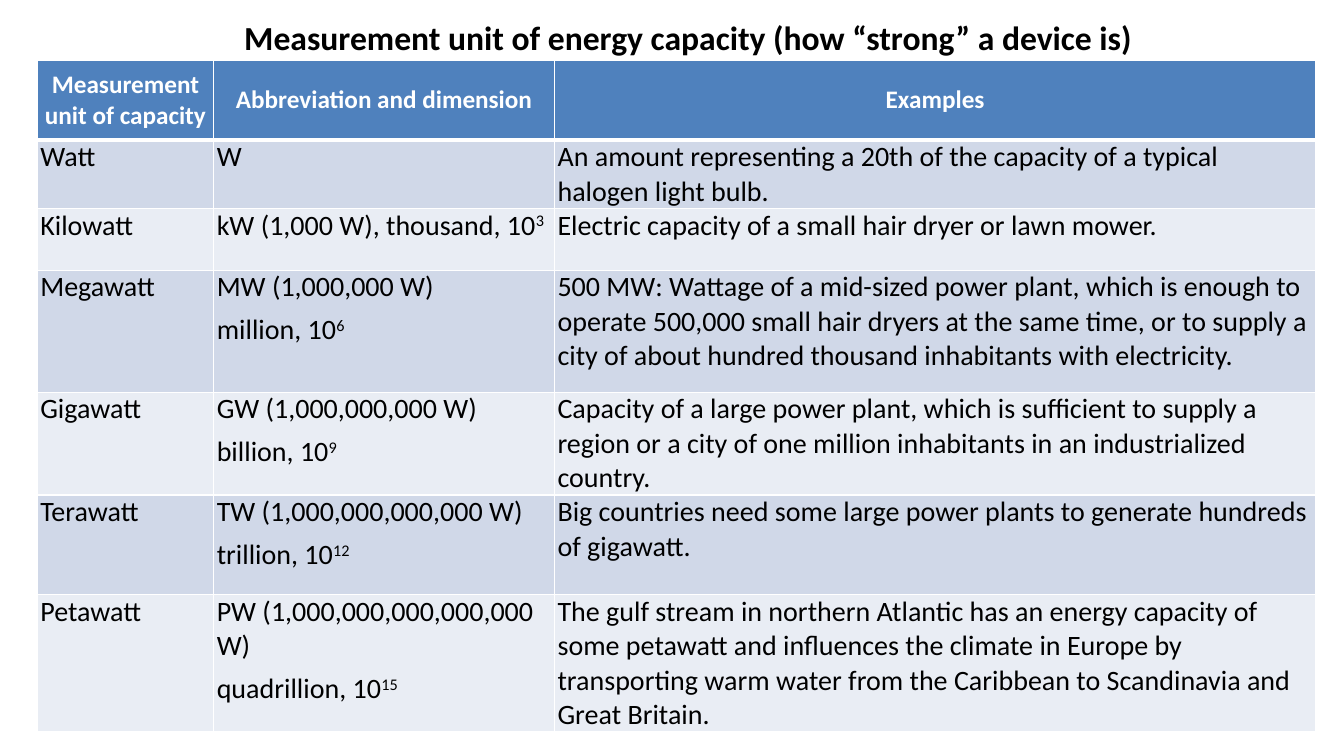
from lxml import etree
from pptx import Presentation
from pptx.dml.color import RGBColor
from pptx.enum.text import MSO_ANCHOR, PP_ALIGN
from pptx.oxml.ns import qn
from pptx.util import Inches, Pt

COLORS = {"header": "4F81BD", "odd": "D0D8E8", "even": "E9EDF4",
          "white": "FFFFFF", "black": "000000"}
FONT = "Calibri"
COL_WIDTHS = [1.75, 3.38, 7.55]
ROW_HEIGHTS = [0.79, 0.68, 0.61, 1.21, 0.91, 0.99, 1.29]
ROWS = [
    ("Measurement unit of capacity", "Abbreviation and dimension", "Examples"),
    ("Watt", "W",
     "An amount representing a 20th of the capacity of a typical halogen light bulb."),
    ("Kilowatt", "kW (1,000 W), thousand, 10^3",
     "Electric capacity of a small hair dryer or lawn mower."),
    ("Megawatt", "MW (1,000,000 W)\nmillion, 10^6",
     "500 MW: Wattage of a mid-sized power plant, which is enough to operate "
     "500,000 small hair dryers at the same time, or to supply a city of about "
     "hundred thousand inhabitants with electricity."),
    ("Gigawatt", "GW (1,000,000,000 W)\nbillion, 10^9",
     "Capacity of a large power plant, which is sufficient to supply a region or "
     "a city of one million inhabitants in an industrialized country."),
    ("Terawatt", "TW (1,000,000,000,000 W)\ntrillion, 10^12",
     "Big countries need some large power plants to generate hundreds of gigawatt."),
    ("Petawatt", "PW (1,000,000,000,000,000 W)\nquadrillion, 10^15",
     "The gulf stream in northern Atlantic has an energy capacity of some petawatt "
     "and influences the climate in Europe by transporting warm water from the "
     "Caribbean to Scandinavia and Great Britain."),
]


def style_run(r, size, color, bold):
    r.font.name = FONT
    r.font.size = Pt(size)
    r.font.bold = bold
    r.font.color.rgb = RGBColor.from_string(COLORS[color])


def set_borders(cell, widths):
    tcPr = cell._tc.get_or_add_tcPr()
    for i, (side, width) in enumerate(widths.items()):
        ln = etree.Element(qn(f"a:ln{side}"), w=str(Pt(width)))
        fill = etree.SubElement(ln, qn("a:solidFill"))
        etree.SubElement(fill, qn("a:srgbClr"), val=COLORS["white"])
        tcPr.insert(i, ln)


prs = Presentation()
prs.slide_width, prs.slide_height = Inches(13.33), Inches(7.5)
s = prs.slides.add_slide(prs.slide_layouts[5])

title = s.shapes.title
title.left, title.top = Inches(1.63), Inches(0.13)
title.width, title.height = Inches(10.39), Inches(0.47)
tf = title.text_frame
tf.text = "Measurement unit of energy capacity (how “strong” a device is)"
tf.vertical_anchor = MSO_ANCHOR.MIDDLE
tf.paragraphs[0].alignment = PP_ALIGN.CENTER
style_run(tf.paragraphs[0].runs[0], 24, "black", True)

table = s.shapes.add_table(len(ROWS), len(COL_WIDTHS), Inches(0.37), Inches(0.6),
                           Inches(sum(COL_WIDTHS)), Inches(sum(ROW_HEIGHTS))).table
for col, width in zip(table.columns, COL_WIDTHS):
    col.width = Inches(width)

for i, (texts, height) in enumerate(zip(ROWS, ROW_HEIGHTS)):
    table.rows[i].height = Inches(height)
    header = i == 0
    band = "header" if header else "odd" if i % 2 else "even"
    for j, text in enumerate(texts):
        cell = table.cell(i, j)
        cell.fill.solid()
        cell.fill.fore_color.rgb = RGBColor.from_string(COLORS[band])
        cell.margin_left = cell.margin_right = Inches(0.03)
        cell.margin_top = cell.margin_bottom = 0
        cell.vertical_anchor = MSO_ANCHOR.MIDDLE if header else MSO_ANCHOR.TOP
        set_borders(cell, {"L": 1, "R": 1, "T": 3 if i == 1 else 1,
                           "B": 3 if header else 1})
        cell.text_frame.text = text
        for p in cell.text_frame.paragraphs:
            p.alignment = PP_ALIGN.CENTER if header else PP_ALIGN.LEFT
            p.space_after = Pt(6)
            base, _, exponent = p.text.partition("^")
            p.text = base
            if exponent:
                r = p.add_run()
                r.text = exponent
                r.font._element.set("baseline", "30000")
            for r in p.runs:
                style_run(r, 18 if header else 20, "white" if header else "black", header)

prs.save("out.pptx")
